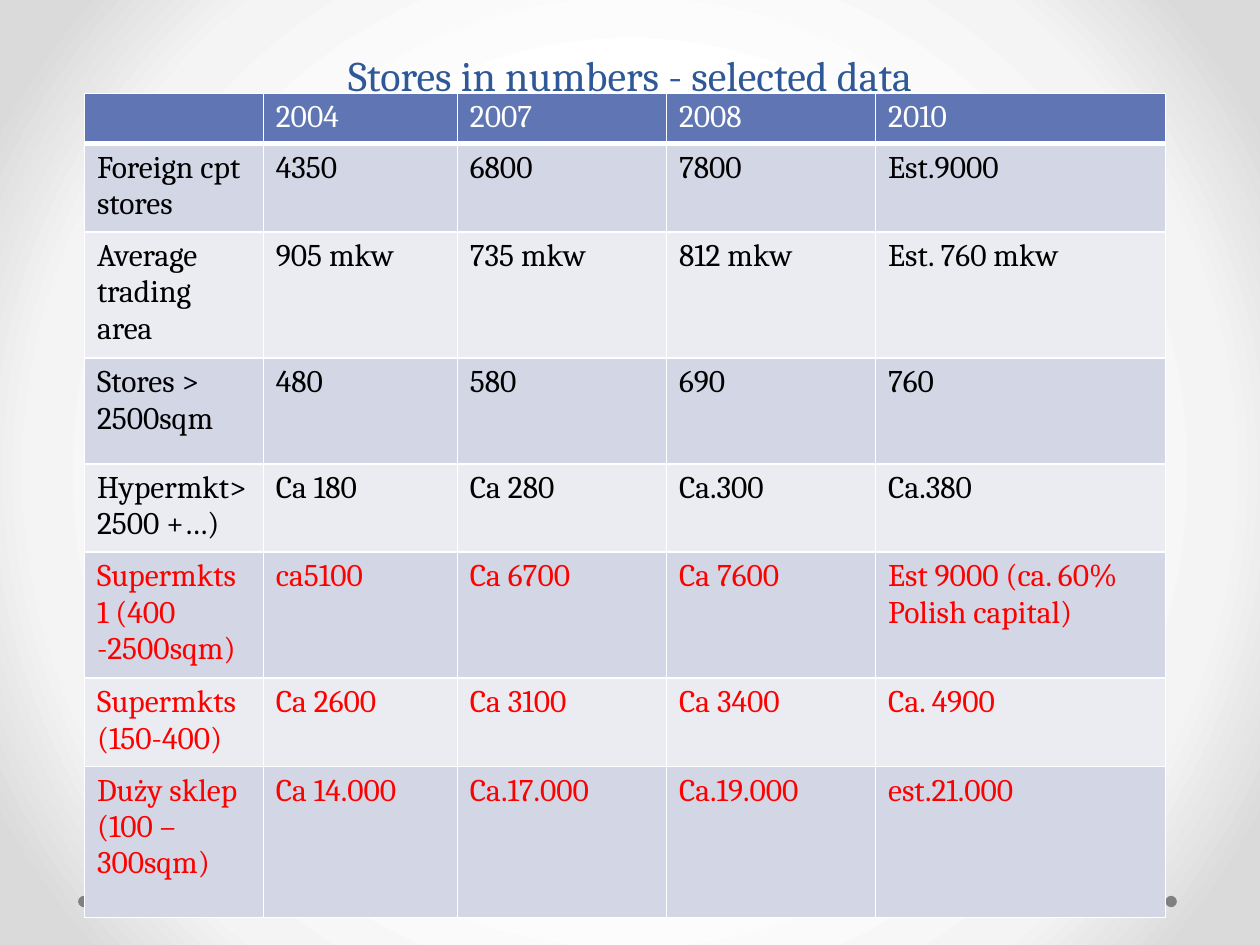
from lxml import etree
from pptx import Presentation
from pptx.dml.color import RGBColor
from pptx.enum.shapes import MSO_SHAPE
from pptx.enum.text import MSO_ANCHOR, PP_ALIGN
from pptx.oxml import parse_xml
from pptx.oxml.ns import nsdecls
from pptx.util import Inches, Pt

OVAL = MSO_SHAPE.OVAL
BOTTOM = MSO_ANCHOR.BOTTOM
CENTER = PP_ALIGN.CENTER
FONT = "Cambria"
COLORS = {
    "title": "2F5897", "header": "6076B4", "odd": "D2D6E5", "even": "EAECF2",
    "white": "FFFFFF", "black": "000000", "red": "FF0000", "dot": "808080",
    "pale": "F4F4F4", "edge": "DADADA",
}
BACKGROUND_STOPS = [(50, "white"), (76, "pale"), (92, "edge")]
COLUMN_WIDTHS = [1.42, 1.54, 1.66, 1.66, 2.3]
ROW_HEIGHTS = [0.39, 0.67, 0.97, 0.84, 0.68, 0.97, 0.67, 1.2]
FIRST_RED_ROW = 5
STORE_ROWS = [
    ["", "2004", "2007", "2008", "2010"],
    ["Foreign cpt stores", "4350", "6800", "7800", "Est.9000"],
    ["Average trading area", "905 mkw", "735 mkw", "812 mkw", "Est. 760 mkw"],
    ["Stores >\n2500sqm", "480", "580", "690", "760"],
    ["Hypermkt>2500 +…)", "Ca 180", "Ca 280", "Ca.300", "Ca.380"],
    ["Supermkts 1 (400 -2500sqm)", "ca5100", "Ca 6700", "Ca 7600",
     "Est 9000 (ca. 60% Polish capital)"],
    ["Supermkts (150-400)", "Ca 2600", "Ca 3100", "Ca 3400", "Ca. 4900"],
    ["Duży sklep\n(100 –300sqm)", "Ca 14.000", "Ca.17.000", "Ca.19.000", "est.21.000"],
]


def rgb(name):
    return RGBColor.from_string(COLORS[name])


def set_background(slide):
    stops = "".join(
        f'<a:gs pos="{position * 1000}"><a:srgbClr val="{COLORS[name]}"/></a:gs>'
        for position, name in BACKGROUND_STOPS
    )
    background = parse_xml(
        f'<p:bg {nsdecls("p", "a")}><p:bgPr><a:gradFill rotWithShape="1">'
        f'<a:gsLst>{stops}</a:gsLst><a:path path="circle">'
        '<a:fillToRect l="50000" t="50000" r="50000" b="50000"/></a:path>'
        '</a:gradFill><a:effectLst/></p:bgPr></p:bg>'
    )
    slide.element.cSld.insert(0, background)


def add_dot(slide, left):
    shape = slide.shapes.add_shape(OVAL, Inches(left), Inches(7.11), Inches(0.09), Inches(0.09))
    shape.shadow.inherit = False
    shape.fill.solid()
    shape.fill.fore_color.rgb = rgb("dot")
    shape.line.fill.background()


def add_run(paragraph, text, size, color):
    run = paragraph.add_run()
    run.text = text
    run.font.size = Pt(size)
    run.font.name = FONT
    run.font.color.rgb = rgb(color)


def add_title(slide, text):
    box = slide.shapes.add_textbox(Inches(0.5), Inches(0.13), Inches(9), Inches(0.71))
    frame = box.text_frame
    frame.word_wrap = True
    frame.vertical_anchor = BOTTOM
    paragraph = frame.paragraphs[0]
    paragraph.alignment = CENTER
    paragraph.line_spacing = Pt(58)
    add_run(paragraph, text, 24, "title")


def set_borders(cell, bottom_width):
    properties = cell._tc.get_or_add_tcPr()
    for index, side in enumerate("LRTB"):
        width = bottom_width if side == "B" else 1
        border = parse_xml(
            f'<a:ln{side} {nsdecls("a")} w="{Pt(width)}"/>'
        )
        fill = etree.SubElement(border, border.tag.replace(f"ln{side}", "solidFill"))
        etree.SubElement(fill, fill.tag.replace("solidFill", "srgbClr"), val=COLORS["white"])
        properties.insert(index, border)


def fill_cell(cell, text, fill, color, bottom_width):
    cell.fill.solid()
    cell.fill.fore_color.rgb = rgb(fill)
    set_borders(cell, bottom_width)
    frame = cell.text_frame
    for index, line in enumerate(text.split("\n")):
        paragraph = frame.add_paragraph() if index else frame.paragraphs[0]
        if line:
            add_run(paragraph, line, 18, color)
        else:
            paragraph.font.size = Pt(18)


def row_style(index):
    if index == 0:
        return "header", "white", 3
    fill = "odd" if index % 2 else "even"
    return fill, "red" if index >= FIRST_RED_ROW else "black", 1


def add_store_table(slide):
    table = slide.shapes.add_table(
        len(STORE_ROWS), len(COLUMN_WIDTHS), Inches(0.67), Inches(0.74),
        Inches(sum(COLUMN_WIDTHS)), Inches(sum(ROW_HEIGHTS)),
    ).table
    table.first_row = False
    table.horz_banding = False
    for column, width in zip(table.columns, COLUMN_WIDTHS):
        column.width = Inches(width)
    for index, (row, height, texts) in enumerate(zip(table.rows, ROW_HEIGHTS, STORE_ROWS)):
        row.height = Inches(height)
        for cell, text in zip(row.cells, texts):
            fill_cell(cell, text, *row_style(index))


def main():
    presentation = Presentation()
    presentation.slide_width = Inches(10)
    presentation.slide_height = Inches(7.5)
    slide = presentation.slides.add_slide(presentation.slide_layouts[6])
    set_background(slide)
    for left in (9.25, 0.62):
        add_dot(slide, left)
    add_title(slide, "Stores in numbers - selected data")
    add_store_table(slide)
    presentation.save("out.pptx")


if __name__ == "__main__":
    main()
